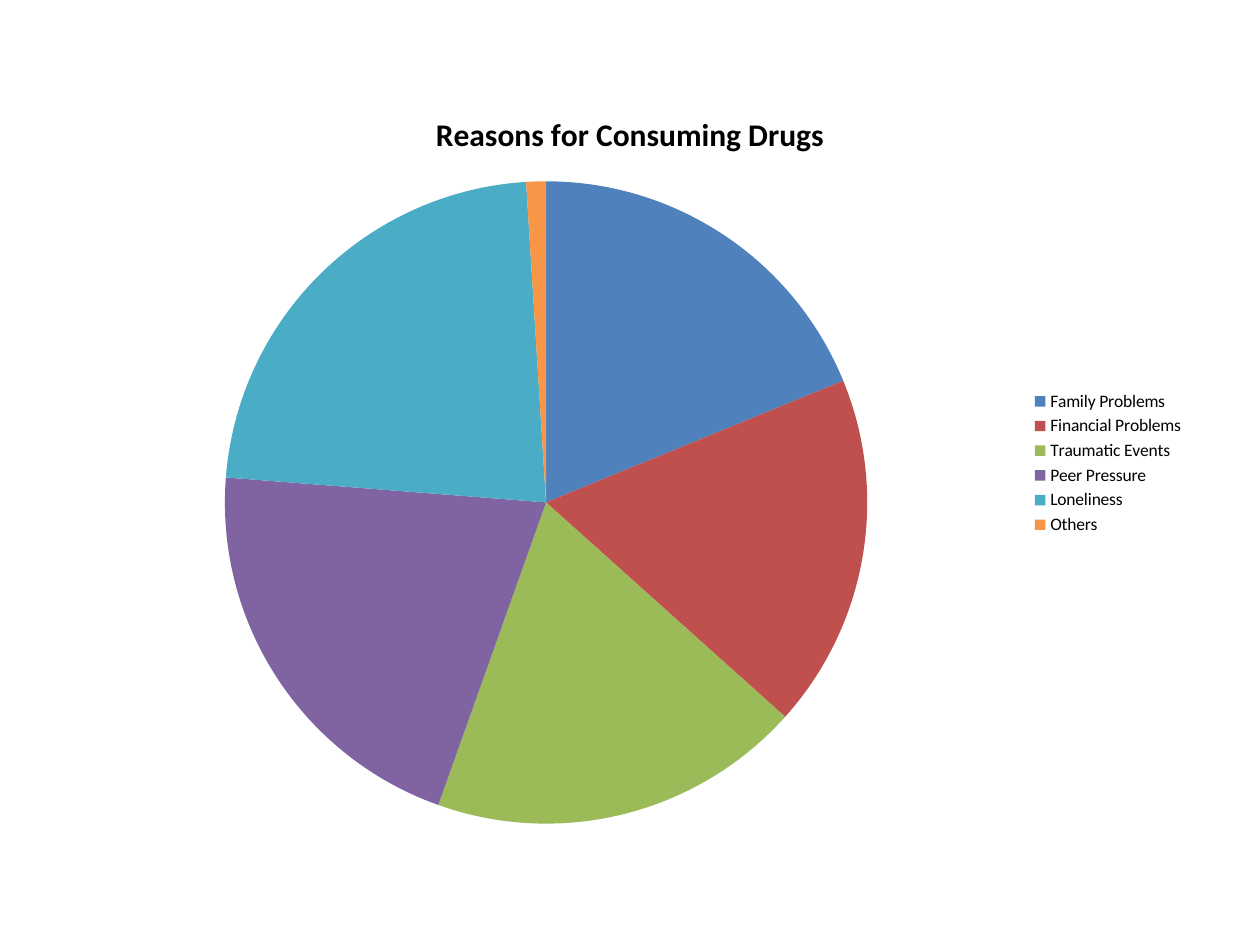
import pptx
import pptx.chart.data
import pptx.dml.color
import pptx.enum.chart
import pptx.util

COLORS = {
    "text": "000000",
    "Family Problems": "4F81BD",
    "Financial Problems": "C0504D",
    "Traumatic Events": "9BBB59",
    "Peer Pressure": "8064A2",
    "Loneliness": "4BACC6",
    "Others": "F79646",
}
REASONS = {
    "Family Problems": 19,
    "Financial Problems": 18,
    "Traumatic Events": 19,
    "Peer Pressure": 21,
    "Loneliness": 23,
    "Others": 1,
}
TITLE = "Reasons for Consuming Drugs"


def rgb(name):
    """Return the named colour."""
    return pptx.dml.color.RGBColor.from_string(COLORS[name])


def set_font(font, size, bold=False):
    """Apply the chart's typeface at the given size."""
    font.name = "Calibri"
    font.size = pptx.util.Pt(size)
    font.bold = bold
    font.color.rgb = rgb("text")


def add_pie(s, box, title, values):
    """Add a titled pie chart with a legend on the right."""
    data = pptx.chart.data.CategoryChartData()
    data.categories = list(values)
    data.add_series(title, list(values.values()))
    chart = s.shapes.add_chart(pptx.enum.chart.XL_CHART_TYPE.PIE, *box, data).chart
    set_font(chart.font, 10)
    chart.has_title = True
    p = chart.chart_title.text_frame.paragraphs[0]
    p.text = title
    set_font(p.font, 18, bold=True)
    chart.chart_title.include_in_layout = False
    chart.has_legend = True
    chart.legend.position = pptx.enum.chart.XL_LEGEND_POSITION.RIGHT
    chart.legend.include_in_layout = False
    plot = chart.plots[0]
    plot.vary_by_categories = True
    for i, name in enumerate(values):
        fill = plot.series[0].points[i].format.fill
        fill.solid()
        fill.fore_color.rgb = rgb(name)


def main():
    """Build and save the slide."""
    prs = pptx.Presentation()
    prs.slide_width = pptx.util.Inches(10)
    prs.slide_height = pptx.util.Inches(7.5)
    s = prs.slides.add_slide(prs.slide_layouts[6])
    w, h = prs.slide_width, prs.slide_height
    box = [int(n) for n in (w * 0.05, h * 0.09, w * 0.9, h * 0.8)]
    add_pie(s, box, TITLE, REASONS)
    prs.save("out.pptx")


if __name__ == "__main__":
    main()
